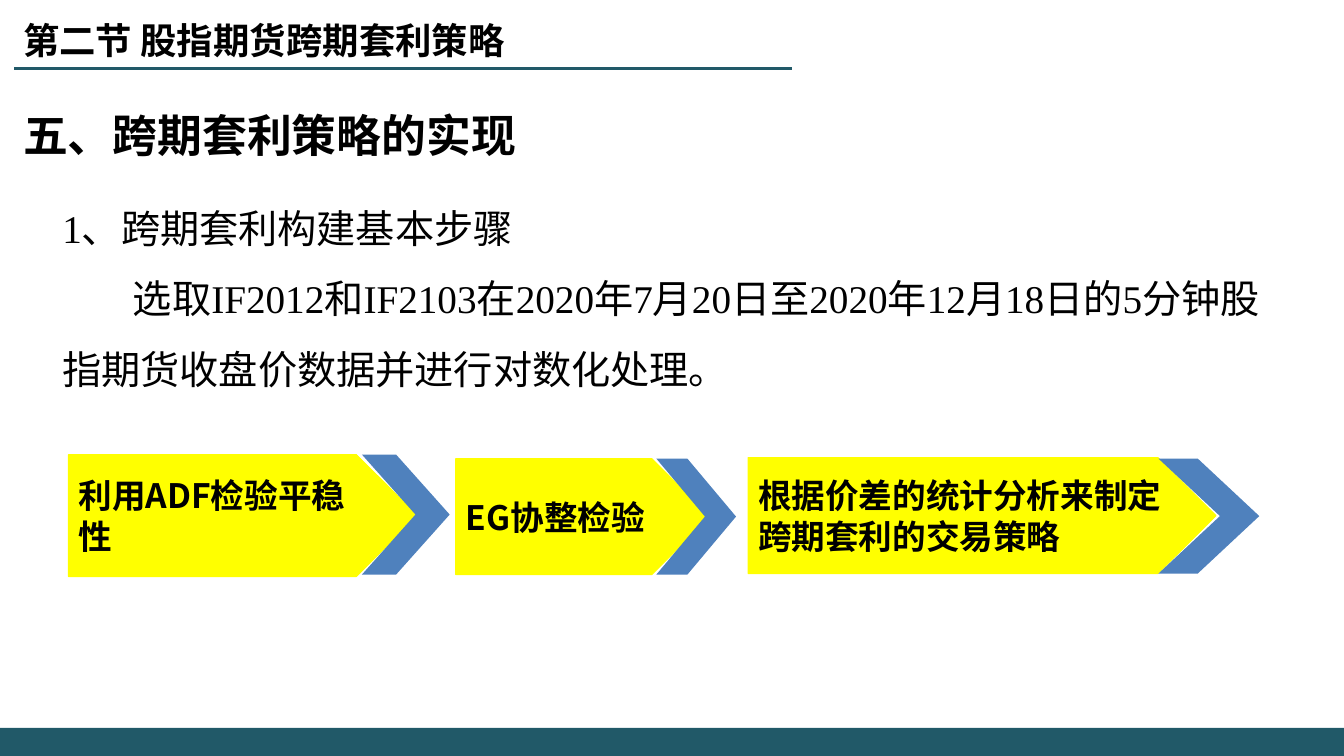
from pptx import Presentation
from pptx.dml.color import RGBColor
from pptx.enum.shapes import MSO_CONNECTOR, MSO_SHAPE
from pptx.enum.text import MSO_ANCHOR, PP_ALIGN
from pptx.oxml.ns import qn
from pptx.util import Inches, Pt

WIDE, HIGH = 13.33, 7.5
SANS, SERIF = "Noto Sans CJK SC", "Times New Roman"
TEAL, YELLOW, BLUE, BLACK = "215968", "FFFF00", "4F81BD", "000000"

SECTION = "第二节 股指期货跨期套利策略"
TITLE = "五、跨期套利策略的实现"
BODY = [
    # text, first-line indent
    ("1、跨期套利构建基本步骤", 0),
    ("选取IF2012和IF2103在2020年7月20日至2020年12月18日的"
     "5分钟股指期货收盘价数据并进行对数化处理。", 0.7),
]
STEPS = [
    # text, plate box, arrow box
    ("利用ADF检验平稳性", (0.68, 4.51, 3.46, 1.21), (3.59, 4.51, 0.87, 1.19)),
    ("EG协整检验", (4.52, 4.55, 2.52, 1.15), (6.51, 4.55, 0.79, 1.15)),
    ("根据价差的统计分析来制定跨期套利的交易策略",
     (7.42, 4.54, 4.64, 1.15), (11.49, 4.55, 1, 1.14)),
]
FOOT = 0.39  # share of an arrow's width taken by its flat edge


def color(code):
    return RGBColor.from_string(code)


def paint(shape, fill, edge=None):
    shape.shadow.inherit = False
    shape.fill.solid()
    shape.fill.fore_color.rgb = color(fill)
    if edge:
        shape.line.color.rgb = color(edge)
        shape.line.width = Pt(0.75)
    else:
        shape.line.fill.background()


def write(shape, lines, size, font=SANS, bold=False, space=None,
          anchor=MSO_ANCHOR.TOP):
    """Fill a shape with (text, first-line indent) pairs."""
    frame = shape.text_frame
    frame.word_wrap = True
    frame.vertical_anchor = anchor
    for i, (text, indent) in enumerate(lines):
        para = frame.paragraphs[0] if i == 0 else frame.add_paragraph()
        para.alignment = PP_ALIGN.LEFT
        if space:
            para.line_spacing = space
        if indent:
            para._p.get_or_add_pPr().set("indent", str(Inches(indent)))
        run = para.add_run()
        run.text = text
        run.font.size = Pt(size)
        run.font.bold = bold
        run.font.name = font
        run.font.color.rgb = color(BLACK)
        east = run._r.get_or_add_rPr().makeelement(
            qn("a:ea"), {"typeface": SANS})
        run._r.rPr.find(qn("a:latin")).addnext(east)


def label(shapes, box, lines, size, **style):
    write(shapes.add_textbox(*map(Inches, box)), lines, size, **style)


def plate(shapes, box, text):
    shape = shapes.add_shape(MSO_SHAPE.PENTAGON, *map(Inches, box))
    shape.adjustments[0] = 0.5
    paint(shape, YELLOW, YELLOW)
    write(shape, [(text, 0)], 24, bold=True, anchor=MSO_ANCHOR.MIDDLE)


def arrow(shapes, box):
    x, y, w, h = box
    foot = FOOT * w
    points = [(x + foot, y), (x + w, y + h / 2), (x + foot, y + h),
              (x, y + h), (x + w - foot, y + h / 2)]
    form = shapes.build_freeform(Inches(x), Inches(y))
    form.add_line_segments([(Inches(a), Inches(b)) for a, b in points])
    paint(form.convert_to_shape(), BLUE)


def rule(shapes, left, right, y):
    line = shapes.add_connector(MSO_CONNECTOR.STRAIGHT, Inches(left),
                                Inches(y), Inches(right), Inches(y))
    line.line.color.rgb = color(TEAL)
    line.line.width = Pt(1.5)
    props = line._element.spPr
    props.append(props.makeelement(qn("a:effectLst"), {}))


def main():
    deck = Presentation()
    deck.slide_width, deck.slide_height = Inches(WIDE), Inches(HIGH)
    shapes = deck.slides.add_slide(deck.slide_layouts[6]).shapes

    foot = 0.28
    band = shapes.add_shape(MSO_SHAPE.RECTANGLE, 0, Inches(HIGH - foot),
                            Inches(WIDE), Inches(foot))
    paint(band, TEAL)
    rule(shapes, 0.14, 7.86, 0.68)

    label(shapes, (0.13, 0.13, 6.11, 0.54), [(SECTION, 0)], 26, bold=True)
    label(shapes, (0.13, 1.02, 8.19, 0.7), [(TITLE, 0)], 32,
          font=SERIF, bold=True)
    label(shapes, (0.52, 1.74, 12.28, 2.2), BODY, 28, font=SERIF, space=1.5)

    for text, box, tip in STEPS:
        plate(shapes, box, text)
        arrow(shapes, tip)

    deck.save("out.pptx")


if __name__ == "__main__":
    main()
